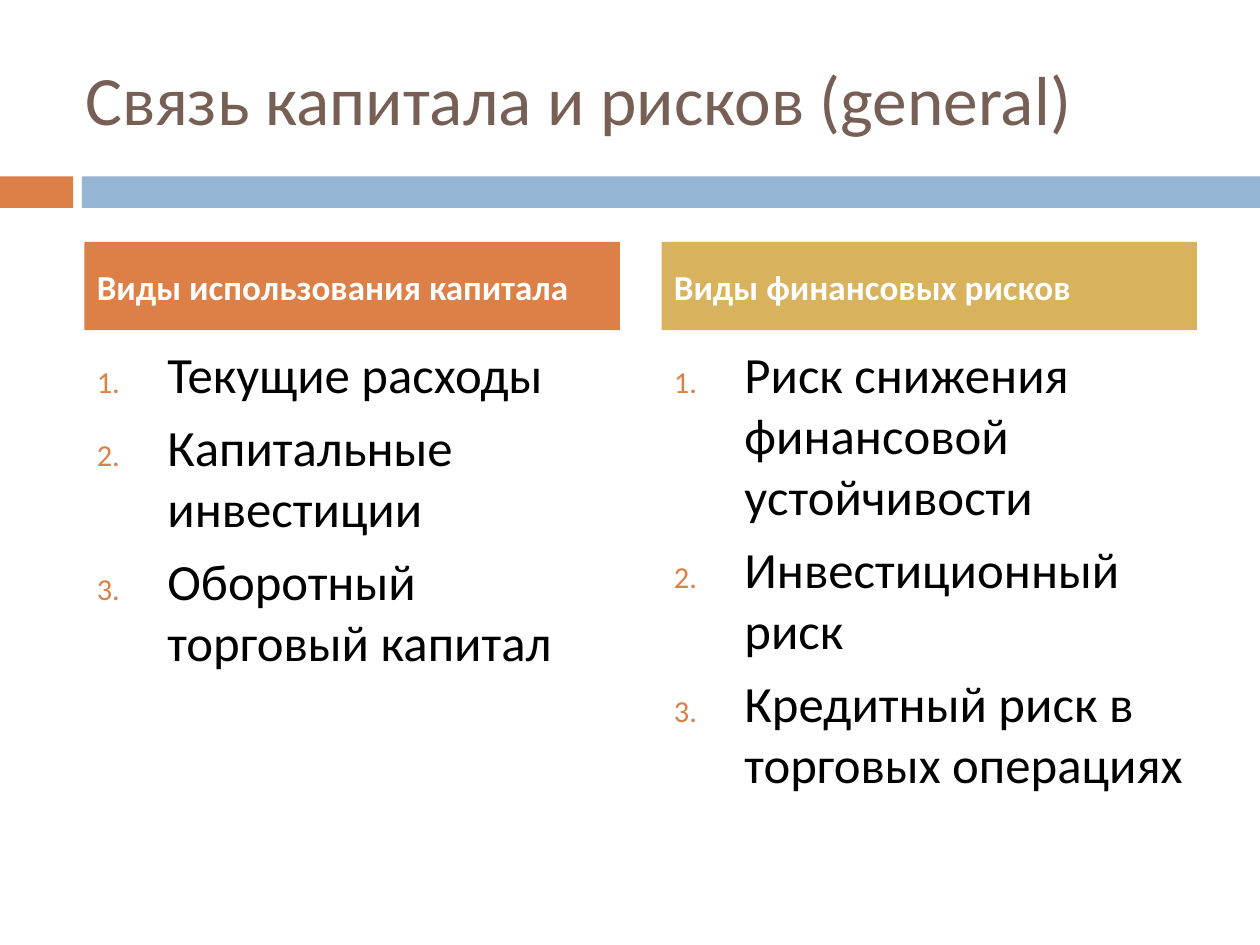
from dataclasses import dataclass

from lxml import etree
from pptx import Presentation
from pptx import util as u
from pptx.dml.color import RGBColor
from pptx.enum import shapes, text
from pptx.oxml import ns

Inches, Pt = u.Inches, u.Pt

ORANGE = RGBColor(0xDD, 0x80, 0x47)
BLUE = RGBColor(0x94, 0xB6, 0xD2)
GOLD = RGBColor(0xD8, 0xB2, 0x5C)
BROWN = RGBColor(0x77, 0x5F, 0x55)
WHITE = RGBColor(0xFF, 0xFF, 0xFF)
BLACK = RGBColor(0x00, 0x00, 0x00)
FONT = "Calibri"
COLUMN_WIDTH = Inches(4.25)
LIST_INDENT = Inches(0.56)
SPACE_BEFORE = Pt(7)


@dataclass
class Column:
    left: float
    color: RGBColor
    heading: str
    items: list[str]


COLUMNS = [
    Column(0.67, ORANGE, "Виды использования капитала",
           ["Текущие расходы", "Капитальные инвестиции", "Оборотный торговый капитал"]),
    Column(5.25, GOLD, "Виды финансовых рисков",
           ["Риск снижения финансовой устойчивости", "Инвестиционный риск",
            "Кредитный риск в торговых операциях"]),
]


def add_bar(slide, left: int, top: int, width: int, height: int, color: RGBColor):
    shape = slide.shapes.add_shape(shapes.MSO_SHAPE.RECTANGLE, left, top, width, height)
    shape.shadow.inherit = False
    shape.fill.solid()
    shape.fill.fore_color.rgb = color
    shape.line.fill.background()
    return shape


def write(paragraph, words: str, size: float, color: RGBColor, bold: bool = False) -> None:
    paragraph.text = words
    paragraph.alignment = text.PP_ALIGN.LEFT
    font = paragraph.font
    font.name, font.size, font.bold = FONT, Pt(size), bold
    font.color.rgb = color


def add_number(paragraph) -> None:
    """Number the paragraph with a small orange figure and a hanging indent."""
    properties = paragraph._p.get_or_add_pPr()
    properties.set("marL", str(LIST_INDENT))
    properties.set("indent", str(-LIST_INDENT))
    color = etree.SubElement(properties, ns.qn("a:buClr"))
    etree.SubElement(color, ns.qn("a:srgbClr"), val=str(ORANGE))
    etree.SubElement(properties, ns.qn("a:buSzPct"), val="60000")
    etree.SubElement(properties, ns.qn("a:buFont"), typeface=FONT)
    etree.SubElement(properties, ns.qn("a:buAutoNum"), type="arabicPeriod")


def add_column(slide, column: Column) -> None:
    left = Inches(column.left)

    # Coloured heading
    heading = add_bar(slide, left, Inches(1.92), COLUMN_WIDTH, Inches(0.7), column.color)
    heading.text_frame.vertical_anchor = text.MSO_ANCHOR.MIDDLE
    paragraph = heading.text_frame.paragraphs[0]
    paragraph.space_before = SPACE_BEFORE
    write(paragraph, column.heading, 20, WHITE, bold=True)

    # Numbered list
    box = slide.shapes.add_textbox(left, Inches(2.67), COLUMN_WIDTH, Inches(3.92))
    frame = box.text_frame
    frame.word_wrap = True
    for index, item in enumerate(column.items):
        paragraph = frame.add_paragraph() if index else frame.paragraphs[0]
        paragraph.space_before = SPACE_BEFORE
        add_number(paragraph)
        write(paragraph, item, 29, BLACK)


def main() -> None:
    presentation = Presentation()
    presentation.slide_width, presentation.slide_height = Inches(10), Inches(7.5)
    slide = presentation.slides.add_slide(presentation.slide_layouts[6])

    # Band under the title
    add_bar(slide, 0, Inches(1.4), Inches(0.58), Inches(0.25), ORANGE)
    add_bar(slide, Inches(0.65), Inches(1.4), Inches(9.35), Inches(0.25), BLUE)

    # Title
    title = slide.shapes.add_textbox(Inches(0.58), Inches(0.3), Inches(8.92), Inches(0.95))
    title.text_frame.word_wrap = True
    title.text_frame.vertical_anchor = text.MSO_ANCHOR.MIDDLE
    write(title.text_frame.paragraphs[0], "Связь капитала и рисков (general)", 39.6, BROWN)

    # Two columns
    for column in COLUMNS:
        add_column(slide, column)

    presentation.save("out.pptx")


if __name__ == "__main__":
    main()
